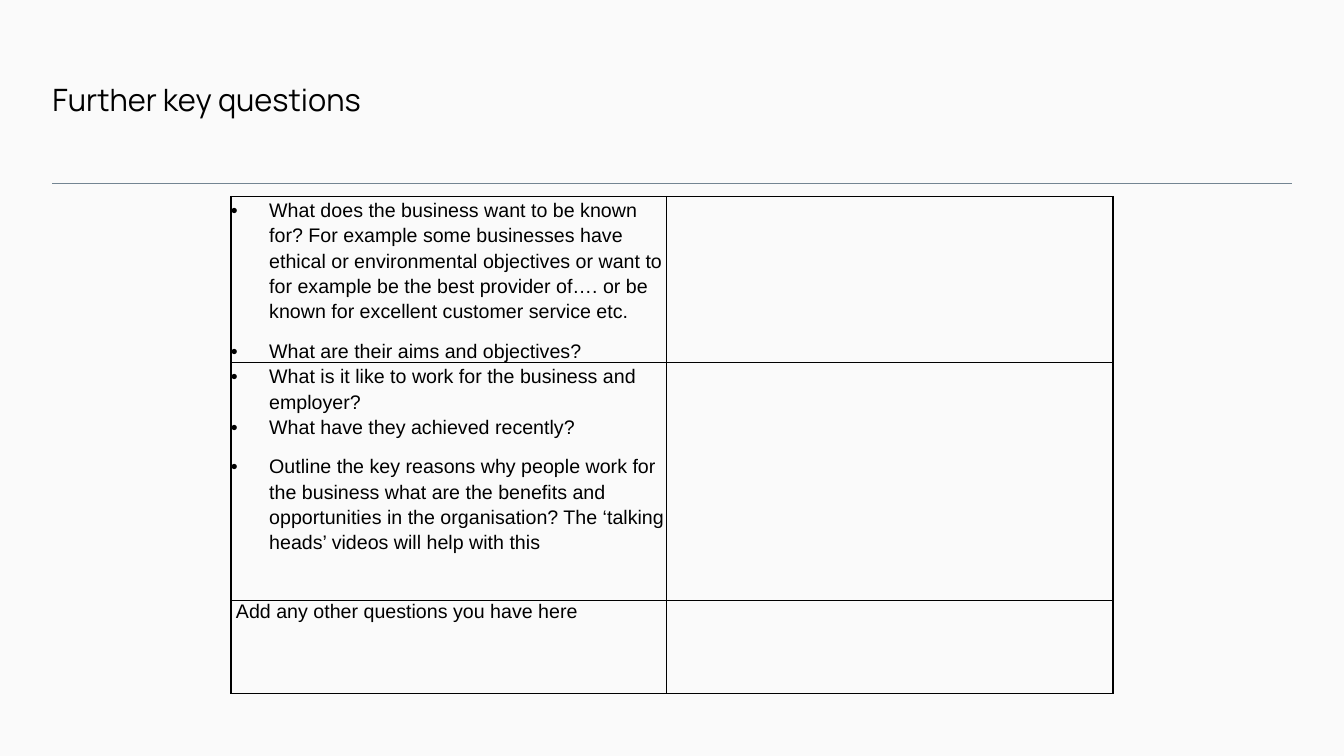
"""Build the slide of further key questions with its answer table."""
from dataclasses import dataclass

from lxml import etree
from pptx import Presentation
from pptx import util as u
from pptx.dml.color import RGBColor
from pptx.enum import shapes, text
from pptx.oxml import ns

BLACK = RGBColor(0x00, 0x00, 0x00)
RULE_GREY = RGBColor(0x73, 0x85, 0x92)
PAPER = RGBColor(0xFA, 0xFA, 0xFA)
COLUMN_WIDTHS = (4.32, 4.43)
BULLET_INDENT = 0.38
BORDER_SIDES = ("lnL", "lnR", "lnT", "lnB")


@dataclass(frozen=True)
class Question:
    wording: str
    space_before: int = 0


@dataclass(frozen=True)
class QuestionRow:
    height: float
    questions: tuple[Question, ...]
    bulleted: bool = True


ROWS = (
    QuestionRow(1.65, (
        Question("What does the business want to be known for? For example some "
                 "businesses have ethical or environmental objectives or want to for "
                 "example be the best provider of…. or be known for excellent "
                 "customer service etc."),
        Question("What are their aims and objectives?", 10),
    )),
    QuestionRow(2.36, (
        Question("What is it like to work for the business and employer?"),
        Question("What have they achieved recently?"),
        Question("Outline the key reasons why people work for the business what are "
                 "the benefits and opportunities in the organisation? The ‘talking "
                 "heads’ videos will help with this", 10),
    )),
    QuestionRow(0.92, (Question("Add any other questions you have here"),), False),
)


def style_font(para, name: str, size: int) -> None:
    para.font.name = name
    para.font.size = u.Pt(size)
    para.font.color.rgb = BLACK


def add_title(page) -> None:
    title = page.shapes.title
    title.left, title.top = u.Inches(0.52), u.Inches(0.84)
    title.width, title.height = u.Inches(12.28), u.Inches(0.73)
    frame = title.text_frame
    frame.text = "Further key questions"
    frame.auto_size = text.MSO_AUTO_SIZE.NONE
    frame.vertical_anchor = text.MSO_ANCHOR.TOP
    frame.margin_left = frame.margin_right = frame.margin_top = frame.margin_bottom = 0
    para = frame.paragraphs[0]
    para.alignment = text.PP_ALIGN.LEFT
    para.line_spacing = 0.9
    style_font(para, "Manrope", 22)


def add_rule(page) -> None:
    rule = page.shapes.add_connector(
        shapes.MSO_CONNECTOR.STRAIGHT,
        u.Inches(0.52), u.Inches(1.82), u.Inches(12.81), u.Inches(1.82))
    rule.line.color.rgb = RULE_GREY
    rule.line.width = u.Pt(0.5)
    etree.SubElement(rule._element.spPr, ns.qn("a:effectLst"))


def style_cell(cell) -> None:
    cell.margin_left = cell.margin_right = cell.margin_top = cell.margin_bottom = 0
    properties = cell._tc.get_or_add_tcPr()
    for side in BORDER_SIDES:
        border = etree.SubElement(properties, ns.qn(f"a:{side}"), w=str(u.Pt(1)))
        fill = etree.SubElement(border, ns.qn("a:solidFill"))
        etree.SubElement(fill, ns.qn("a:srgbClr"), val=str(BLACK))
    cell.fill.background()


def add_bullet(para) -> None:
    properties = para._p.get_or_add_pPr()
    properties.set("marL", str(u.Inches(BULLET_INDENT)))
    properties.set("indent", str(-u.Inches(BULLET_INDENT)))
    etree.SubElement(properties, ns.qn("a:buFont"), typeface="Arial")
    etree.SubElement(properties, ns.qn("a:buChar"), char="•")


def write_questions(cell, row: QuestionRow) -> None:
    frame = cell.text_frame
    for number, question in enumerate(row.questions):
        para = frame.add_paragraph() if number else frame.paragraphs[0]
        para.text = question.wording
        if row.bulleted:
            add_bullet(para)
            para.line_spacing = 1.15
        else:
            cell.margin_left = u.Inches(0.05)
        if question.space_before:
            para.space_before = u.Pt(question.space_before)
        style_font(para, "Arial", 14)


def add_question_table(page) -> None:
    table = page.shapes.add_table(
        len(ROWS), len(COLUMN_WIDTHS), u.Inches(2.29), u.Inches(1.95),
        u.Inches(sum(COLUMN_WIDTHS)), u.Inches(sum(row.height for row in ROWS))).table
    table.first_row = table.horz_banding = False
    for column, width in zip(table.columns, COLUMN_WIDTHS):
        column.width = u.Inches(width)
    for cell in table.iter_cells():
        style_cell(cell)
    for number, row in enumerate(ROWS):
        table.rows[number].height = u.Inches(row.height)
        write_questions(table.cell(number, 0), row)


def main() -> None:
    deck = Presentation()
    deck.slide_width, deck.slide_height = u.Inches(13.33), u.Inches(7.5)
    page = deck.slides.add_slide(deck.slide_layouts[5])
    page.background.fill.solid()
    page.background.fill.fore_color.rgb = PAPER
    add_rule(page)
    add_question_table(page)
    add_title(page)
    deck.save("out.pptx")


if __name__ == "__main__":
    main()
